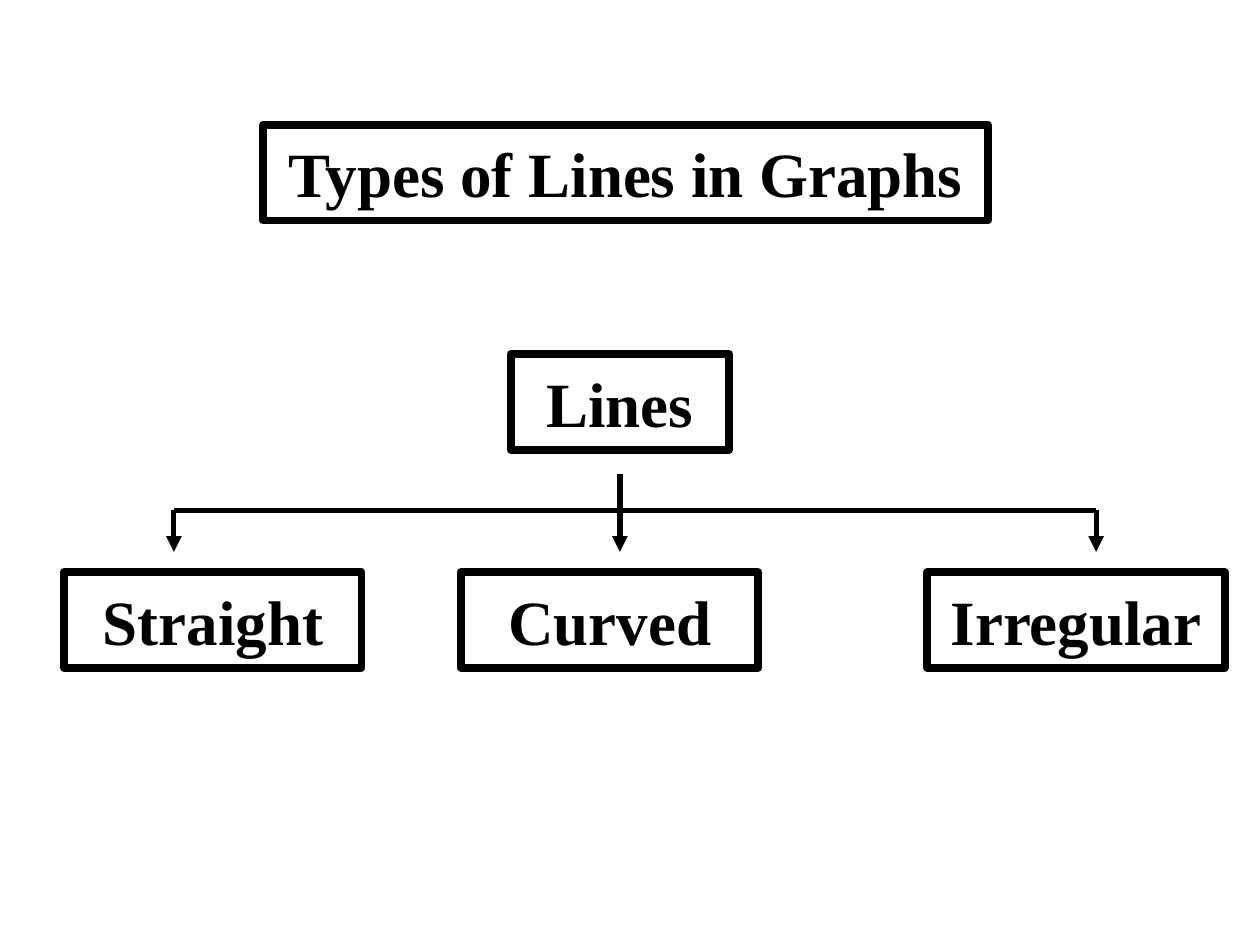
from lxml import etree
from pptx import Presentation
from pptx.dml.color import RGBColor
from pptx.enum.shapes import MSO_CONNECTOR, MSO_SHAPE
from pptx.enum.text import MSO_ANCHOR, MSO_AUTO_SIZE, PP_ALIGN
from pptx.oxml.ns import qn
from pptx.util import Inches, Pt

BLACK, WHITE = "000000", "FFFFFF"
BOX_HEIGHT = 0.76
BRANCH_WIDTH = 2.36
# Label, left edge of its box and x of its arrow, relative to the tree
BRANCHES = [("Straight", 0, 0.87), ("Curved", 3.15, 4.41), ("Irregular", 6.85, 8.19)]


def color(hex_code):
    return RGBColor.from_string(hex_code)


def write_text(shape, text, size=36, bold=True, font_name="Times New Roman",
               font_color=BLACK, align=PP_ALIGN.CENTER):
    frame = shape.text_frame
    frame.text = text
    frame.word_wrap = True
    frame.auto_size = MSO_AUTO_SIZE.NONE
    frame.vertical_anchor = MSO_ANCHOR.MIDDLE
    paragraph = frame.paragraphs[0]
    paragraph.alignment = align
    font = paragraph.runs[0].font
    font.name, font.size, font.bold = font_name, Pt(size), bold
    font.color.rgb = color(font_color)


def frame_label(shape, text):
    """Give a shape the white fill, heavy border and bold text of every box."""
    shape.fill.solid()
    shape.fill.fore_color.rgb = color(WHITE)
    shape.line.color.rgb = color(BLACK)
    shape.line.width = Pt(4.5)
    write_text(shape, text)


def add_box(slide, text, left, top, width):
    box = slide.shapes.add_shape(MSO_SHAPE.RECTANGLE, Inches(left), Inches(top),
                                 Inches(width), Inches(BOX_HEIGHT))
    box.shadow.inherit = False
    frame_label(box, text)


def add_line(slide, x1, y1, x2, y2, arrow=False):
    line = slide.shapes.add_connector(MSO_CONNECTOR.STRAIGHT, Inches(x1), Inches(y1),
                                      Inches(x2), Inches(y2))
    line.line.color.rgb = color(BLACK)
    line.line.width = Pt(3)
    if arrow:
        etree.SubElement(line.line._get_or_add_ln(), qn("a:tailEnd"), type="triangle")
    etree.SubElement(line._element.spPr, qn("a:effectLst"))


def place_title(slide, text, left, top, width):
    title = slide.shapes.title
    title.left, title.top = Inches(left), Inches(top)
    title.width, title.height = Inches(width), Inches(BOX_HEIGHT)
    frame_label(title, text)


def add_tree(slide, root, branches, left, top):
    """Draw the root box, its forked arrows and the row of branch boxes."""
    stem_top, fork, tip, row = (top + offset for offset in (0.95, 1.24, 1.57, 1.73))
    arrows = [left + arrow_x for _, _, arrow_x in branches]
    middle = len(arrows) // 2
    for index, x in enumerate(arrows):
        add_line(slide, x, stem_top if index == middle else fork, x, tip, arrow=True)
    add_line(slide, arrows[0], fork, arrows[-1], fork)

    root_width = 1.73
    add_box(slide, root, arrows[middle] - root_width / 2, top, root_width)
    for label, box_left, _ in branches:
        add_box(slide, label, left + box_left, row, BRANCH_WIDTH)


def main():
    presentation = Presentation()
    presentation.slide_width, presentation.slide_height = Inches(10), Inches(7.5)
    slide = presentation.slides.add_slide(presentation.slide_layouts[5])
    place_title(slide, "Types of Lines in Graphs", 2.09, 0.99, 5.75)
    add_tree(slide, "Lines", BRANCHES, 0.51, 2.81)
    presentation.save("out.pptx")


if __name__ == "__main__":
    main()
